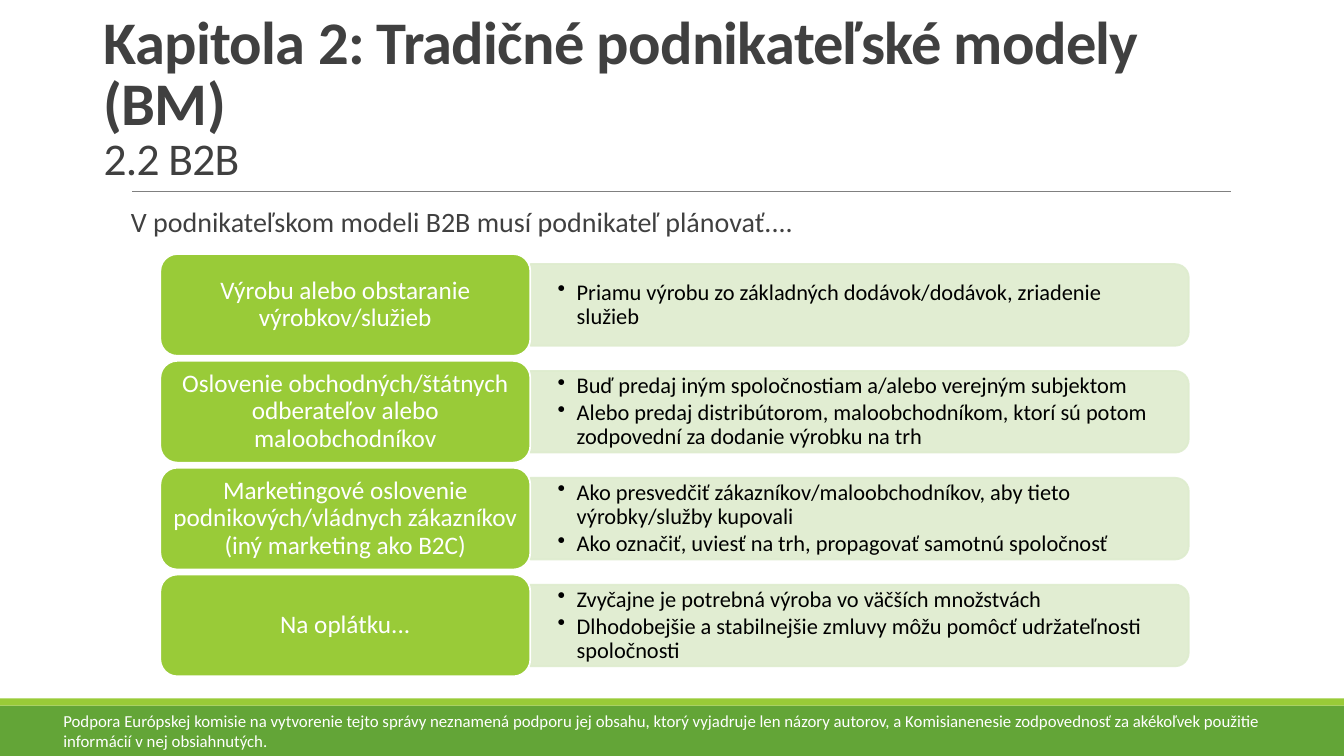
from lxml import etree
from pptx import Presentation
from pptx.dml.color import RGBColor
from pptx.enum import shapes, text
from pptx.oxml import ns
from pptx.util import Inches, Pt

GREEN = RGBColor(0x63, 0xA5, 0x37)
LIME = RGBColor(0x99, 0xCB, 0x38)
PALE = RGBColor(0xDE, 0xEC, 0xCE)
GREY = RGBColor(0x80, 0x80, 0x80)
DARK = RGBColor(0x40, 0x40, 0x40)
WHITE = RGBColor(0xFF, 0xFF, 0xFF)
BLACK = RGBColor(0, 0, 0)

ROWS = [
    ("Výrobu alebo obstaranie výrobkov/služieb",
     ["Priamu výrobu zo základných dodávok/dodávok, zriadenie služieb"]),
    ("Oslovenie obchodných/štátnych odberateľov alebo maloobchodníkov",
     ["Buď predaj iným spoločnostiam a/alebo verejným subjektom",
      "Alebo predaj distribútorom, maloobchodníkom, ktorí sú potom zodpovední za dodanie výrobku na trh"]),
    ("Marketingové oslovenie podnikových/vládnych zákazníkov (iný marketing ako B2C)",
     ["Ako presvedčiť zákazníkov/maloobchodníkov, aby tieto výrobky/služby kupovali",
      "Ako označiť, uviesť na trh, propagovať samotnú spoločnosť"]),
    ("Na oplátku...",
     ["Zvyčajne je potrebná výroba vo väčších množstvách",
      "Dlhodobejšie a stabilnejšie zmluvy môžu pomôcť udržateľnosti spoločnosti"]),
]
ROW_TOP, ROW_PITCH, ROW_HEIGHT = 2.52, 1.06, 1.01
LABEL_LEFT, LABEL_WIDTH = 1.59, 3.67
BAR_LEFT, BAR_WIDTH, BAR_HEIGHT = 5.26, 6.53, 0.81
TEXT_WIDTH, TEXT_HEIGHT = 6.49, 0.73


class SlideBuilder:
    """Draws styled elements on the current slide."""

    def __init__(self, slide, font="Calibri"):
        self.slide = slide
        self.font = font

    def shape(self, kind, x, y, w, h, fill, line=None):
        sp = self.slide.shapes.add_shape(kind, Inches(x), Inches(y), Inches(w), Inches(h))
        sp.shadow.inherit = False
        sp.fill.solid()
        sp.fill.fore_color.rgb = fill
        if line is None:
            sp.line.fill.background()
        else:
            sp.line.color.rgb = line
            sp.line.width = Pt(1.25)
        return sp

    def bar(self, x, y, w, h):
        sp = self.shape(shapes.MSO_SHAPE.ROUND_2_SAME_RECTANGLE,
                        x + (w - h) / 2, y + (h - w) / 2, h, w, PALE, PALE)
        sp.rotation = 90
        for color in sp._element.spPr.iter(ns.qn("a:srgbClr")):
            etree.SubElement(color, ns.qn("a:alpha"), val="90000")

    def rule(self, x1, x2, y):
        line = self.slide.shapes.add_connector(
            shapes.MSO_CONNECTOR.STRAIGHT, Inches(x1), Inches(y), Inches(x2), Inches(y))
        line.line.color.rgb = GREY
        line.line.width = Pt(0.5)
        etree.SubElement(line._element.spPr, ns.qn("a:effectLst"))

    def set_text(self, sp, lines, size, color, insets=(0.1, 0.05), spacing=1.0,
                 anchor=text.MSO_ANCHOR.TOP, align=text.PP_ALIGN.LEFT):
        tf = sp.text_frame
        tf.word_wrap = True
        tf.vertical_anchor = anchor
        tf.margin_left = tf.margin_right = Inches(insets[0])
        tf.margin_top = tf.margin_bottom = Inches(insets[1])
        tf.text = "\n".join(lines)
        for p in tf.paragraphs:
            p.alignment = align
            p.line_spacing = spacing
            for r in p.runs:
                r.font.name = self.font
                r.font.size = Pt(size)
                r.font.color.rgb = color
        return tf

    def textbox(self, x, y, w, h, lines, size, color, **style):
        sp = self.slide.shapes.add_textbox(Inches(x), Inches(y), Inches(w), Inches(h))
        return self.set_text(sp, lines, size, color, **style)

    def title(self, x, y, w, h, heading, subheading):
        tf = self.textbox(x, y, w, h, [f"{heading}\v{subheading}"], 43.2, DARK,
                          spacing=0.85, anchor=text.MSO_ANCHOR.BOTTOM)
        head, sub = tf.paragraphs[0].runs
        head.font.bold = True
        sub.font.size = Pt(32.4)
        for r in (head, sub):
            r._r.get_or_add_rPr().set("spc", "-50")

    def bullets(self, x, y, w, h, lines):
        tf = self.textbox(x, y, w, h, lines, 16, BLACK, insets=(0.27, 0.14),
                          spacing=0.9, anchor=text.MSO_ANCHOR.MIDDLE)
        for p in tf.paragraphs:
            p.space_after = Pt(2)
            pPr = p._p.get_or_add_pPr()
            pPr.set("marL", str(Inches(0.19)))
            pPr.set("indent", str(-Inches(0.19)))
            etree.SubElement(pPr, ns.qn("a:buChar"), char="•")

    def label(self, x, y, w, h, caption):
        sp = self.shape(shapes.MSO_SHAPE.ROUNDED_RECTANGLE, x, y, w, h, LIME, WHITE)
        self.set_text(sp, [caption], 18, WHITE, insets=(0.07, 0.04), spacing=0.9,
                      anchor=text.MSO_ANCHOR.MIDDLE, align=text.PP_ALIGN.CENTER)


def main():
    prs = Presentation()
    prs.slide_width, prs.slide_height = Inches(13.33), Inches(7.5)
    s = SlideBuilder(prs.slides.add_slide(prs.slide_layouts[6]))

    s.shape(shapes.MSO_SHAPE.RECTANGLE, 0, 7, 13.33, 0.5, GREEN)
    s.shape(shapes.MSO_SHAPE.RECTANGLE, 0, 6.93, 13.33, 0.07, LIME)
    s.rule(1.31, 12.21, 1.9)
    s.title(0.93, 0.31, 11.26, 1.57,
            "Kapitola 2: Tradičné podnikateľské modely (BM)", "2.2 B2B")
    s.textbox(1.2, 2.02, 11, 4.4,
              ["V podnikateľskom modeli B2B musí podnikateľ plánovať...."],
              20, DARK, spacing=0.9)

    for i, (caption, points) in enumerate(ROWS):
        top = ROW_TOP + i * ROW_PITCH
        middle = top + ROW_HEIGHT / 2
        s.bar(BAR_LEFT, middle - BAR_HEIGHT / 2, BAR_WIDTH, BAR_HEIGHT)
        s.bullets(BAR_LEFT, middle - TEXT_HEIGHT / 2, TEXT_WIDTH, TEXT_HEIGHT, points)
        s.label(LABEL_LEFT, top, LABEL_WIDTH, ROW_HEIGHT, caption)

    s.textbox(0.53, 7, 12.3, 0.5,
              ["Podpora Európskej komisie na vytvorenie tejto správy neznamená podporu jej obsahu, "
               "ktorý vyjadruje len názory autorov, a Komisianenesie zodpovednosť za akékoľvek "
               "použitie informácií v nej obsiahnutých."], 12, WHITE)
    prs.save("out.pptx")


if __name__ == "__main__":
    main()
